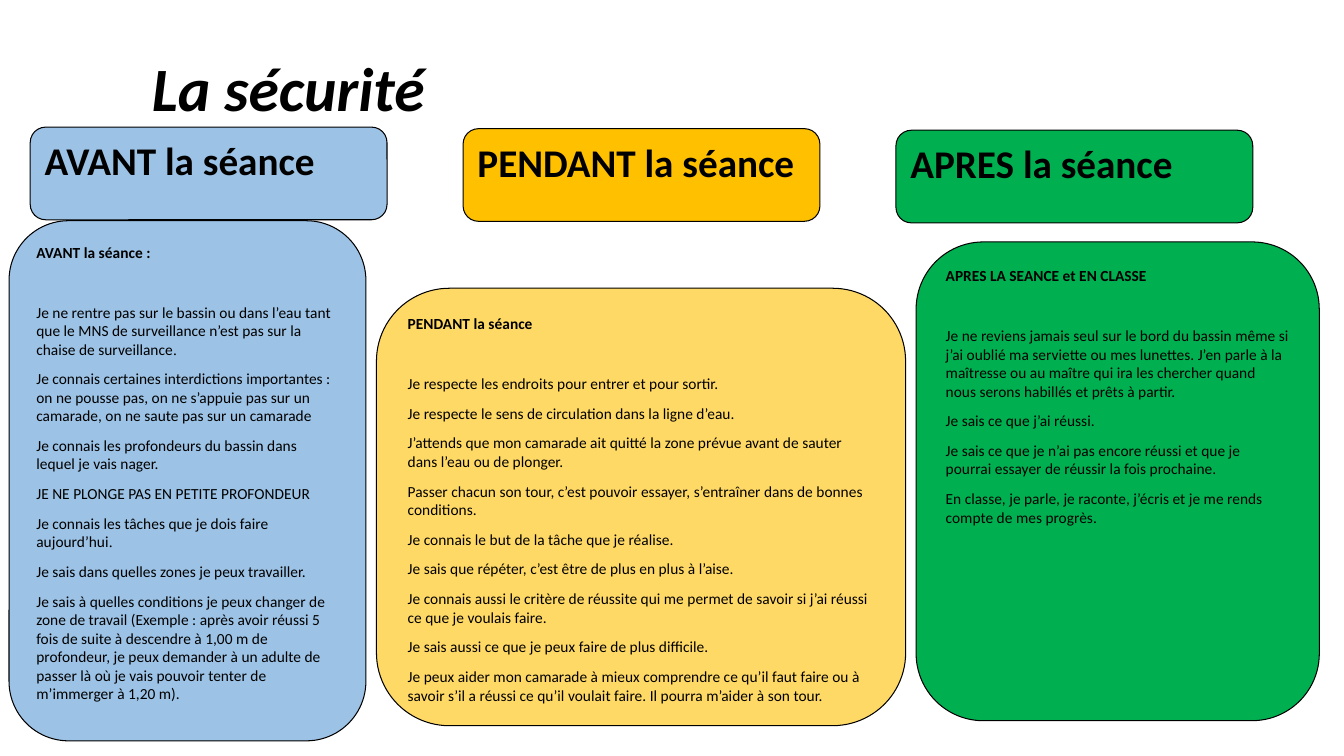
"""Build the slide on safety before, during and after the swimming session."""
from pptx import Presentation
from pptx.dml.color import RGBColor
from pptx.enum.shapes import MSO_SHAPE
from pptx.enum.text import MSO_ANCHOR, PP_ALIGN
from pptx.util import Pt

ROUNDED = MSO_SHAPE.ROUNDED_RECTANGLE
TOP = MSO_ANCHOR.TOP
LEFT = PP_ALIGN.LEFT

BLACK = RGBColor(0x00, 0x00, 0x00)
BLUE = RGBColor(0x9C, 0xC2, 0xE5)
AMBER = RGBColor(0xFF, 0xC0, 0x00)
YELLOW = RGBColor(0xFF, 0xD9, 0x66)
GREEN = RGBColor(0x00, 0xB0, 0x50)

FONT = "Calibri"
STOP_FONT = "Times New Roman"
STOP_MARK = "|"

TITLE = "La sécurité"
PHASES = [
    {
        "label": "AVANT la séance", "label_fill": BLUE, "panel_fill": BLUE,
        "top": 157.7, "width": 254.9, "height": 371.5,
        "heading": "AVANT la séance :",
        "rules": [
            "Je ne rentre pas sur le bassin ou dans l’eau tant que le MNS de surveillance n’est pas sur la chaise de surveillance|.",
            "Je connais certaines interdictions importantes : on ne pousse pas, on ne s’appuie pas sur un camarade, on ne saute pas sur un camarade",
            "Je connais les profondeurs du bassin dans lequel je vais nager.",
            "JE NE PLONGE PAS EN PETITE PROFONDEUR",
            "Je connais les tâches que je dois faire aujourd’hui|.",
            "Je sais dans quelles zones je peux travailler.",
            "Je sais à quelles conditions je peux changer de zone de travail (Exemple : après avoir réussi 5 fois de suite à descendre à 1,00 m de profondeur, je peux demander à un adulte de passer là où je vais pouvoir tenter de m’immerger à 1,20 m).",
        ],
    },
    {
        "label": "PENDANT la séance", "label_fill": AMBER, "panel_fill": YELLOW,
        "top": 205.9, "width": 378, "height": 312.5,
        "heading": "PENDANT la séance",
        "rules": [
            "Je respecte les endroits pour entrer et pour sortir.",
            "Je respecte le sens de circulation dans la ligne d’eau.",
            "J’attends que mon camarade ait quitté la zone prévue avant de sauter dans l’eau ou de plonger.",
            "Passer chacun son tour, c’est pouvoir essayer, s’entraîner dans de bonnes conditions.",
            "Je connais le but de la tâche que je réalise.",
            "Je sais que répéter, c’est être de plus en plus à l’aise.",
            "Je connais aussi le critère de réussite qui me permet de savoir si j’ai réussi ce que je voulais faire.",
            "Je sais aussi ce que je peux faire de plus difficile.",
            "Je peux aider mon camarade à mieux comprendre ce qu’il faut faire ou à savoir s’il a réussi ce qu’il voulait faire. Il pourra m’aider à son tour.",
        ],
    },
    {
        "label": "APRES la séance", "label_fill": GREEN, "panel_fill": GREEN,
        "top": 172.8, "width": 288, "height": 342,
        "heading": "APRES LA SEANCE et EN CLASSE",
        "rules": [
            "Je ne reviens jamais seul sur le bord du bassin même si j’ai oublié ma serviette ou mes lunettes. J’en parle à la maîtresse ou au maître qui ira les chercher quand nous serons habillés et prêts à partir.",
            "Je sais ce que j’ai réussi.",
            "Je sais ce que je n’ai pas encore réussi et que je pourrai essayer de réussir la fois prochaine.",
            "En classe, je parle, je raconte, j’écris et je me rends compte de mes progrès.",
        ],
    },
]

LABEL_LEFT, LABEL_TOP = 21.6, 90.8
LABEL_STEP_X, LABEL_STEP_Y = 309.2, 1.1
LABEL_WIDTH, LABEL_HEIGHT = 254.9, 66.2
PANEL_LEFT, PANEL_GAP = 6.5, 7.5
BODY_SIZE, RULE_GAP, HEADING_GAP = 11, 8, 29.4


def write_paragraph(paragraph, text, size, bold=False, italic=False, gap=0):
    """Fill a paragraph; a marked full stop takes its own font."""
    paragraph.alignment = LEFT
    paragraph.space_after = Pt(gap)
    for part, font_name in zip(text.split(STOP_MARK), (FONT, STOP_FONT)):
        run = paragraph.add_run()
        run.text = part
        run.font.name = font_name
        run.font.size = Pt(size)
        run.font.bold = bold
        run.font.italic = italic
        run.font.color.rgb = BLACK


def add_card(slide, left, top, width, height, fill):
    """Add a rounded, outlined card and return its text frame."""
    shape = slide.shapes.add_shape(ROUNDED, Pt(left), Pt(top), Pt(width), Pt(height))
    shape.shadow.inherit = False
    shape.fill.solid()
    shape.fill.fore_color.rgb = fill
    shape.line.color.rgb = BLACK
    shape.line.width = Pt(0.75)
    shape.text_frame.word_wrap = True
    shape.text_frame.vertical_anchor = TOP
    return shape.text_frame


def main():
    """Lay out the title, the phase labels and the rule panels."""
    presentation = Presentation()
    presentation.slide_width, presentation.slide_height = Pt(960), Pt(540)
    slide = presentation.slides.add_slide(presentation.slide_layouts[6])

    title = slide.shapes.add_textbox(Pt(101.5), Pt(32.4), Pt(252), Pt(60.5))
    title.text_frame.word_wrap = True
    write_paragraph(title.text_frame.paragraphs[0], TITLE, 44, bold=True, italic=True)

    for index, phase in enumerate(PHASES):
        label = add_card(slide, LABEL_LEFT + index * LABEL_STEP_X,
                         LABEL_TOP + index * LABEL_STEP_Y,
                         LABEL_WIDTH, LABEL_HEIGHT, phase["label_fill"])
        write_paragraph(label.paragraphs[0], phase["label"], 28, bold=True, gap=RULE_GAP)

    panel_left = PANEL_LEFT
    for phase in PHASES:
        panel = add_card(slide, panel_left, phase["top"], phase["width"],
                         phase["height"], phase["panel_fill"])
        write_paragraph(panel.paragraphs[0], phase["heading"], BODY_SIZE,
                        bold=True, gap=HEADING_GAP)
        for rule in phase["rules"]:
            write_paragraph(panel.add_paragraph(), rule, BODY_SIZE, gap=RULE_GAP)
        panel_left += phase["width"] + PANEL_GAP

    presentation.save("out.pptx")


if __name__ == "__main__":
    main()
